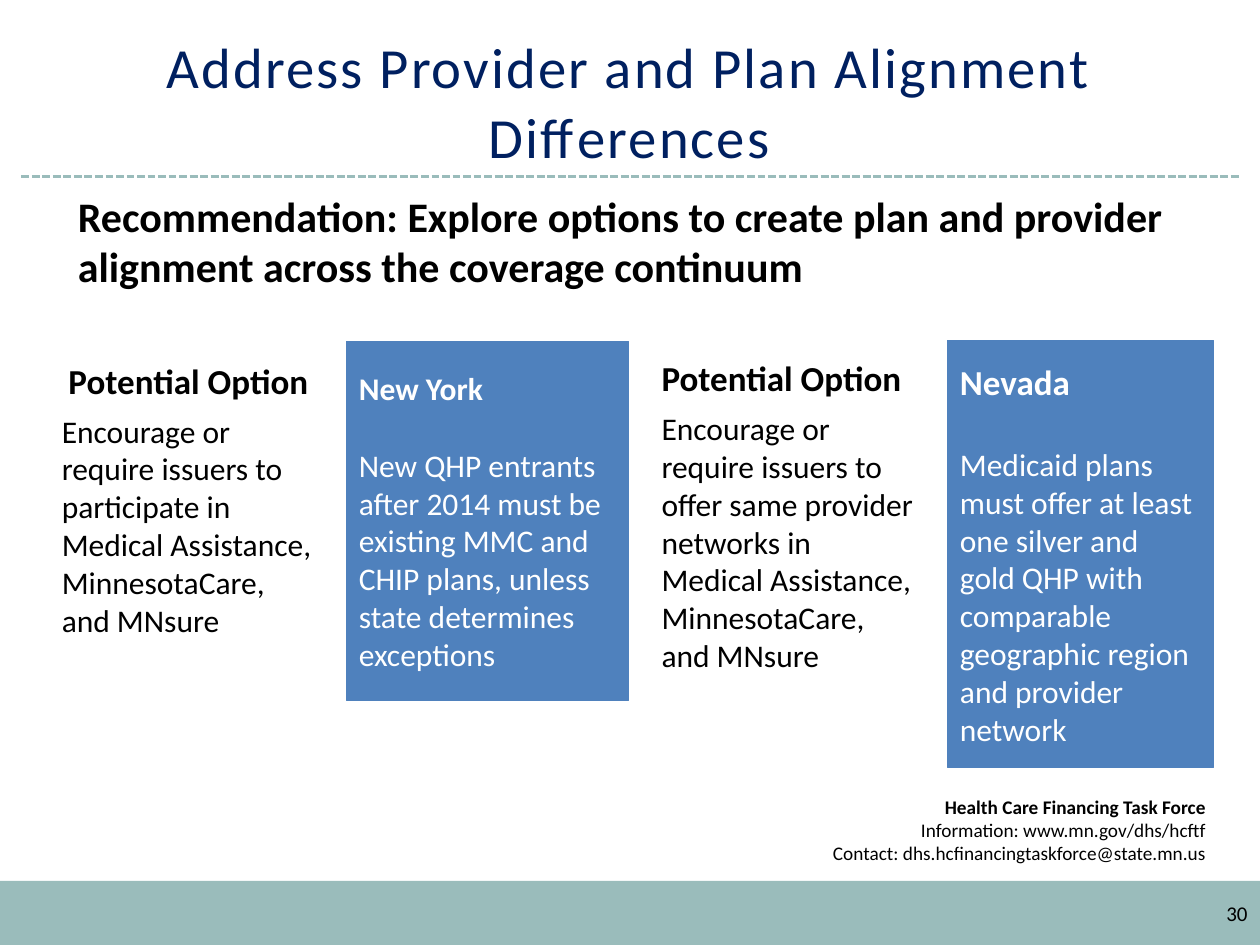
from lxml import etree
from pptx import Presentation
from pptx.dml.color import RGBColor
from pptx.enum.dml import MSO_LINE
from pptx.enum.shapes import MSO_CONNECTOR, MSO_SHAPE
from pptx.enum.text import MSO_ANCHOR, MSO_AUTO_SIZE, PP_ALIGN
from pptx.oxml.ns import qn
from pptx.util import Inches, Pt

FONT = "Calibri"
NAVY = RGBColor(0x00, 0x20, 0x60)
TEAL = RGBColor(0x9A, 0xBC, 0xBB)
BLUE = RGBColor(0x4F, 0x81, 0xBD)
BLACK = RGBColor(0, 0, 0)
WHITE = RGBColor(0xFF, 0xFF, 0xFF)

RECT, LINE = MSO_SHAPE.RECTANGLE, MSO_CONNECTOR.STRAIGHT
DASH, FIXED = MSO_LINE.SQUARE_DOT, MSO_AUTO_SIZE.NONE
LEFT, CENTER, RIGHT = PP_ALIGN.LEFT, PP_ALIGN.CENTER, PP_ALIGN.RIGHT
TOP, MIDDLE, BOTTOM = MSO_ANCHOR.TOP, MSO_ANCHOR.MIDDLE, MSO_ANCHOR.BOTTOM


def style(par, size, color, bold=False, align=LEFT):
    """Format one paragraph and its runs."""
    par.alignment = align
    for run in par.runs:
        font = run.font
        font.name, font.size, font.bold = FONT, Pt(size), bold
        font.color.rgb = color


def add_text(slide, box, text, size, bold=False, align=LEFT, anchor=TOP):
    """Add a wrapped text box, one style for all its lines."""
    frame = slide.shapes.add_textbox(*map(Inches, box)).text_frame
    frame.word_wrap = True
    frame.vertical_anchor = anchor
    frame.text = text
    for par in frame.paragraphs:
        style(par, size, BLACK, bold, align)
    return frame


def add_rect(slide, box, fill, edge=None):
    shape = slide.shapes.add_shape(RECT, *map(Inches, box))
    shape.shadow.inherit = False
    shape.fill.solid()
    shape.fill.fore_color.rgb = fill
    if edge:
        shape.line.color.rgb = edge
        shape.line.width = Pt(0.75)
    else:
        shape.line.fill.background()
    return shape


def add_rule(slide, left, right, top):
    """Add the dashed rule below the title."""
    rule = slide.shapes.add_connector(
        LINE, Inches(left), Inches(top), Inches(right), Inches(top))
    rule.line.color.rgb = TEAL
    rule.line.width = Pt(1.5)
    rule.line.dash_style = DASH
    etree.SubElement(rule._element.spPr, qn("a:effectLst"))


def add_title(slide, box, text):
    title = slide.shapes.title
    title.left, title.top, title.width, title.height = map(Inches, box)
    frame = title.text_frame
    frame.text = text
    frame.auto_size = FIXED
    frame.vertical_anchor = BOTTOM
    par = frame.paragraphs[0]
    par.line_spacing = Pt(40)
    style(par, 32.4, NAVY, align=CENTER)
    par.runs[0]._r.get_or_add_rPr().set("spc", "120")


def add_option(slide, box, text, align=LEFT):
    """Add an option: bold heading over plain text."""
    frame = add_text(slide, box, f"Potential Option\n{text}", 18)
    frame.margin_left = frame.margin_right = 0
    frame.margin_top = frame.margin_bottom = Inches(0.06)
    head = frame.paragraphs[0]
    style(head, 20, BLACK, True, align)
    head.space_after = Pt(6)


def add_state(slide, box, name, text, size, gap):
    """Add a blue box: state name, gap, what the state does."""
    frame = add_rect(slide, box, BLUE, BLUE).text_frame
    frame.word_wrap = True
    frame.vertical_anchor = MIDDLE
    frame.text = f"{name}\n{text}"
    head, body = frame.paragraphs
    style(head, size, WHITE, True)
    head.space_after = Pt(gap)
    style(body, 18, WHITE)


def main():
    deck = Presentation()
    deck.slide_width, deck.slide_height = Inches(10), Inches(7.5)
    slide = deck.slides.add_slide(deck.slide_layouts[5])

    # Frame: footer band, rule and contact lines
    add_rect(slide, (0, 6.99, 10, 0.51), TEAL)
    add_rule(slide, 0.17, 9.83, 1.4)
    contact = add_text(
        slide, (4.54, 6.26, 5.13, 0.67),
        "Health Care Financing Task Force\n"
        "Information: www.mn.gov/dhs/hcftf\n"
        "Contact: dhs.hcfinancingtaskforce@state.mn.us", 11, align=RIGHT)
    style(contact.paragraphs[0], 11, BLACK, True, RIGHT)

    # Title and recommendation
    add_title(slide, (0.33, 0.25, 9.33, 1.15),
              "Address Provider and Plan Alignment Differences")
    add_text(slide, (0.52, 1.41, 8.96, 1),
             "Recommendation: Explore options to create plan and provider "
             "alignment across the coverage continuum", 24, True,
             anchor=MIDDLE)

    # Options, each with a state that has done it
    add_option(slide, (0.49, 2.79, 2.01, 2.35),
               "Encourage or require issuers to participate in Medical "
               "Assistance, MinnesotaCare, and MNsure", CENTER)
    add_state(slide, (2.75, 2.71, 2.24, 2.85), "New York",
              "New QHP entrants after 2014 must be existing MMC and CHIP "
              "plans, unless state determines exceptions", 18, 22)
    add_option(slide, (5.25, 2.77, 2.02, 2.65),
               "Encourage or require issuers to offer same provider networks "
               "in Medical Assistance, MinnesotaCare, and MNsure")
    add_state(slide, (7.52, 2.7, 2.11, 3.39), "Nevada",
              "Medicaid plans must offer at least one silver and\vgold QHP "
              "with comparable geographic region and provider network",
              20, 24.4)

    # Slide number
    add_text(slide, (7.67, 7.1, 2.33, 0.4), "30", 12, align=RIGHT)

    deck.save("out.pptx")


if __name__ == "__main__":
    main()
